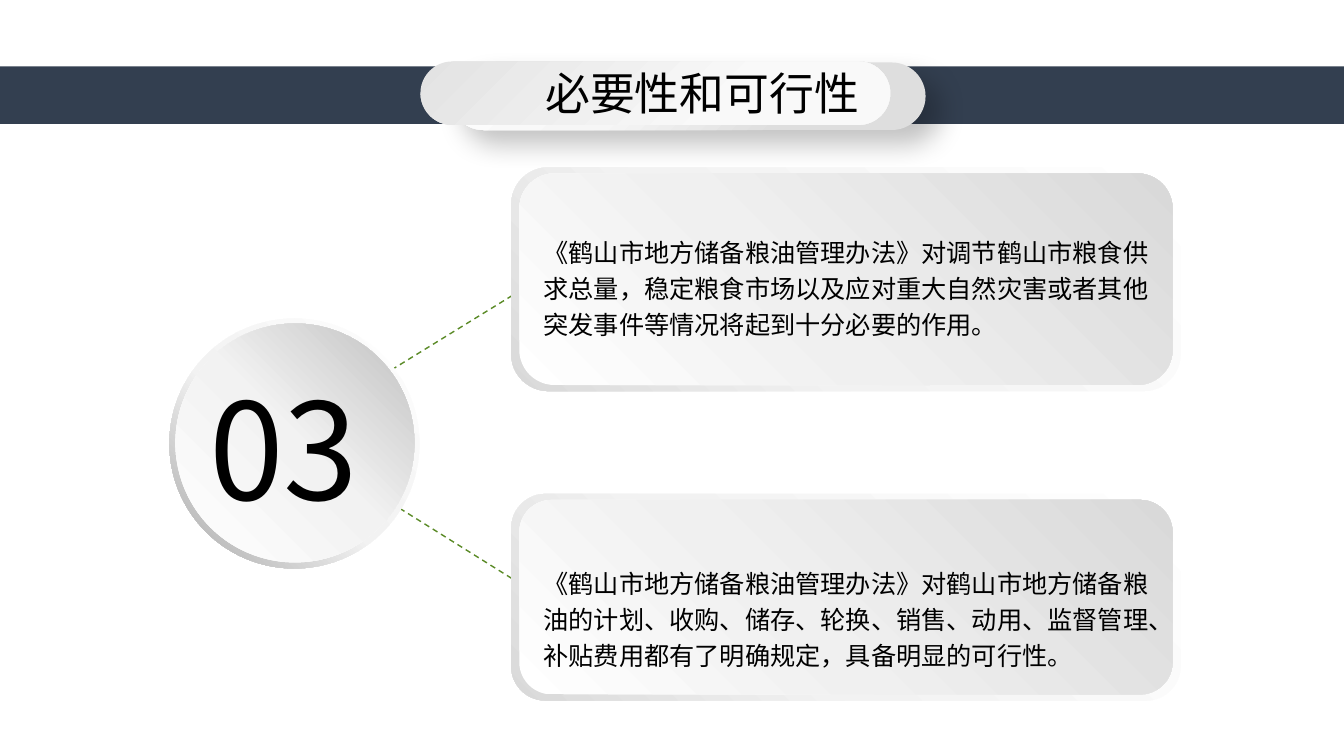
from lxml.etree import SubElement
from pptx import Presentation
from pptx.dml.color import RGBColor
from pptx.enum.dml import MSO_LINE
from pptx.enum.shapes import MSO_CONNECTOR, MSO_SHAPE as Shape
from pptx.enum.text import MSO_ANCHOR as Anchor, MSO_AUTO_SIZE, PP_ALIGN as Align
from pptx.oxml import parse_xml
from pptx.oxml.ns import nsdecls, qn
from pptx.util import Inches, Pt

NAVY = RGBColor(0x33, 0x3F, 0x50)
GREEN = RGBColor(0x5A, 0x8A, 0x26)
BLACK = RGBColor(0, 0, 0)
WHITE = RGBColor(0xFF, 0xFF, 0xFF)
MIST = RGBColor(0xF2, 0xF2, 0xF2)
PALE = RGBColor(0xF0, 0xF0, 0xF0)
SILVER = RGBColor(0xD9, 0xD9, 0xD9)
STEEL = RGBColor(0xBF, 0xBF, 0xBF)
GRAY = RGBColor(0xA6, 0xA6, 0xA6)
ASH = RGBColor(0xDE, 0xDE, 0xDE)
CLOUD = RGBColor(0xE0, 0xE0, 0xE0)
SMOKE = RGBColor(0xE3, 0xE3, 0xE3)
SNOW = RGBColor(0xF6, 0xF6, 0xF6)
FROST = RGBColor(0xF9, 0xF9, 0xF9)
FONT = "Noto Sans CJK SC"
CELL = Inches(0.1)

deck = Presentation()
deck.slide_width, deck.slide_height = Inches(13.33), Inches(7.5)
page = deck.slides.add_slide(deck.slide_layouts[5])


def add_shape(kind, grid, stops, angle=0, round_by=None):
    shape = page.shapes.add_shape(kind, *(int(n * CELL) for n in grid))
    shape.shadow.inherit = False
    shape.line.fill.background()
    if round_by is not None:
        shape.adjustments[0] = round_by
    if len(stops) == 1:
        shape.fill.solid()
        shape.fill.fore_color.rgb = stops[0][1]
        return shape
    marks = "".join(
        f'<a:gs pos="{share * 1000}"><a:srgbClr val="{color}"/></a:gs>'
        for share, color in stops)
    shape.element.spPr.find(qn("a:prstGeom")).addnext(parse_xml(
        f'<a:gradFill {nsdecls("a")} rotWithShape="1"><a:gsLst>{marks}</a:gsLst>'
        f'<a:lin ang="{angle * 60000}" scaled="0"/></a:gradFill>'))
    return shape


def write(box, text, size, align, anchor, side=0.1, spacing=None):
    frame = box.text_frame
    frame.word_wrap = True
    frame.auto_size = MSO_AUTO_SIZE.NONE
    frame.vertical_anchor = anchor
    frame.margin_left = frame.margin_right = Inches(side)
    frame.margin_top = frame.margin_bottom = Inches(0.05)
    para = frame.paragraphs[0]
    para.text = text
    para.alignment = align
    para.line_spacing = spacing
    para.font.size = Pt(size)
    para.font.color.rgb = BLACK
    para.font.name = FONT
    defaults = para._p.pPr.find(qn("a:defRPr"))
    SubElement(defaults, qn("a:ea")).set("typeface", FONT)


add_shape(Shape.RECTANGLE, (0, 6.6, 133.3, 5.7), [(0, NAVY)])
back_pill = add_shape(Shape.ROUNDED_RECTANGLE, (44.6, 6.2, 47.2, 6.7),
                      [(1, ASH), (30, CLOUD), (61, SNOW), (100, WHITE)], 225, 0.5)
back_pill.element.spPr.find(qn("a:effectLst")).append(parse_xml(
    f'<a:outerShdw {nsdecls("a")} blurRad="{Pt(19)}" dist="{Pt(14)}" dir="2700000" '
    f'algn="tl" rotWithShape="0"><a:srgbClr val="{BLACK}"><a:alpha val="24000"/>'
    '</a:srgbClr></a:outerShdw>'))
front_pill = add_shape(Shape.ROUNDED_RECTANGLE, (41.7, 6.1, 46.6, 6.3),
                       [(0, SMOKE), (67, FROST)], 45, 0.5)

title = page.shapes.title
title.left, title.top, title.width, title.height = (
    int(n * CELL) for n in (51.9, 6, 35.5, 6.4))
write(title, "必要性和可行性", 32, Align.CENTER, Anchor.MIDDLE)
front_pill.element.addnext(title.element)

for ends in [(37.2, 48.9, 51.9, 58.1), (37.2, 37.7, 51, 29.2)]:
    link = page.shapes.add_connector(
        MSO_CONNECTOR.STRAIGHT, *(int(n * CELL) for n in ends))
    link.line.color.rgb = GREEN
    link.line.width = Pt(1)
    link.line.dash_style = MSO_LINE.DASH
    SubElement(link.element.spPr, qn("a:effectLst"))

add_shape(Shape.DONUT, (16.8, 31.6, 24.8, 24.8),
          [(0, WHITE), (55, MIST), (100, GRAY)], 135, 0.05)
add_shape(Shape.OVAL, (17.4, 32.1, 23.7, 23.7),
          [(0, WHITE), (51, MIST), (100, STEEL)], 315)
number = page.shapes.add_textbox(*(int(n * CELL) for n in (16.1, 35.6, 24.1, 17.5)))
write(number, "03", 96, Align.CENTER, Anchor.MIDDLE)

panels = [
    (16.6, 22.2, 23.3, 10,
     "《鹤山市地方储备粮油管理办法》对调节鹤山市粮食供求总量，稳定粮食市场以及应对重大自然灾害"
     "或者其他突发事件等情况将起到十分必要的作用。"),
    (49, 20.5, 55.4, 11.5,
     "《鹤山市地方储备粮油管理办法》对鹤山市地方储备粮油的计划、收购、储存、轮换、销售、动用、"
     "监督管理、补贴费用都有了明确规定，具备明显的可行性。"),
]
for top, height, text_top, text_height, text in panels:
    add_shape(Shape.ROUNDED_RECTANGLE, (50.7, top, 66.4, height),
              [(0, WHITE), (62, MIST), (100, SILVER)], 135)
    add_shape(Shape.ROUNDED_RECTANGLE, (51.5, top + 0.6, 64.8, height - 1.2),
              [(0, WHITE), (42, PALE), (100, SILVER)], 315)
    box = page.shapes.add_textbox(
        *(int(n * CELL) for n in (52.6, text_top, 63.1, text_height)))
    write(box, text, 18, Align.LEFT, Anchor.MIDDLE, 0.13, 1.2)

deck.save("out.pptx")
